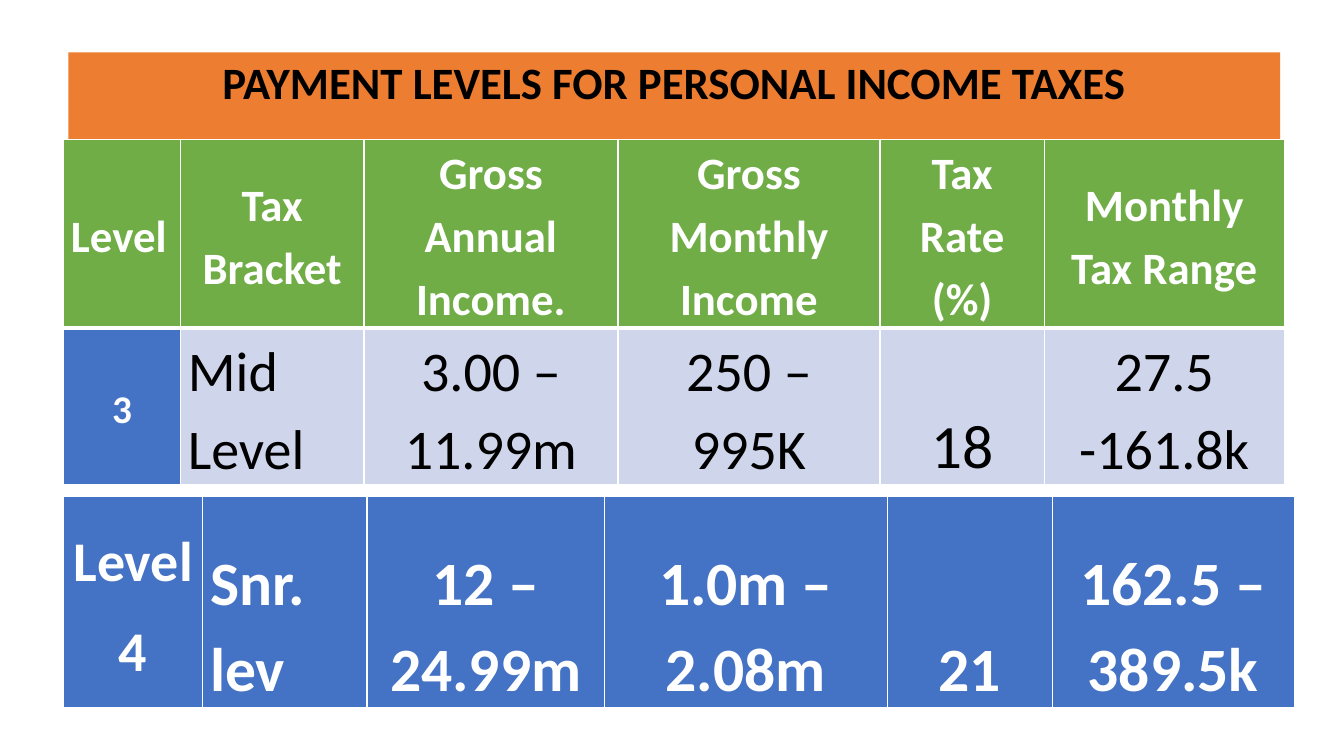
from dataclasses import dataclass

from lxml.etree import SubElement
from pptx import Presentation
from pptx.dml.color import RGBColor
from pptx.enum.shapes import MSO_SHAPE
from pptx.enum.text import MSO_ANCHOR, PP_ALIGN
from pptx.oxml.ns import qn
from pptx.util import Inches, Pt

WIDTH, HEIGHT = Inches(13.333), Inches(7.5)


@dataclass(frozen=True)
class Theme:
    font: str = "Calibri"
    orange: str = "ED7D31"
    green: str = "70AD47"
    blue: str = "4472C4"
    pale: str = "CFD5EA"
    black: str = "000000"
    white: str = "FFFFFF"
    small: int = 28
    heading: int = 32
    body: int = 40
    large: int = 44


THEME = Theme()


@dataclass(frozen=True)
class Cell:
    text: str
    size: int
    fill: str
    color: str = THEME.white
    bold: bool = True
    align: PP_ALIGN = PP_ALIGN.CENTER
    anchor: MSO_ANCHOR = MSO_ANCHOR.BOTTOM
    bottom_line: int = 3


def across(percent):
    return round(WIDTH * percent / 100)


def down(percent):
    return round(HEIGHT * percent / 100)


def add_run(p, text, size, color, bold):
    r = p.add_run()
    r.text = text
    r.font.name = THEME.font
    r.font.size = Pt(size)
    r.font.bold = bold
    r.font.color.rgb = RGBColor.from_string(color)


def add_title(slide, text, left, top, width, height):
    sp = slide.shapes.add_shape(MSO_SHAPE.RECTANGLE, across(left), down(top),
                                across(width), down(height))
    sp.shadow.inherit = False
    sp.fill.solid()
    sp.fill.fore_color.rgb = RGBColor.from_string(THEME.orange)
    sp.line.fill.background()
    tf = sp.text_frame
    tf.word_wrap = True
    tf.vertical_anchor = MSO_ANCHOR.TOP
    tf.margin_top = down(0.25)
    p = tf.paragraphs[0]
    p.alignment = PP_ALIGN.CENTER
    add_run(p, text, THEME.heading, THEME.black, True)


def set_borders(cell, bottom_line):
    tc_pr = cell._tc.get_or_add_tcPr()
    for side, points in (("L", 1), ("R", 1), ("T", 1), ("B", bottom_line)):
        line = SubElement(tc_pr, qn(f"a:ln{side}"), w=str(Pt(points)))
        fill = SubElement(line, qn("a:solidFill"))
        SubElement(fill, qn("a:srgbClr"), val=THEME.white)


def fill_cell(cell, content):
    set_borders(cell, content.bottom_line)
    cell.fill.solid()
    cell.fill.fore_color.rgb = RGBColor.from_string(content.fill)
    cell.vertical_anchor = content.anchor
    cell.margin_left = cell.margin_right = across(0.55)
    cell.margin_top = cell.margin_bottom = 0
    tf = cell.text_frame
    for i, text in enumerate(content.text.split("\n")):
        p = tf.add_paragraph() if i else tf.paragraphs[0]
        p.alignment = content.align
        p.line_spacing = 1.15
        p.space_after = Pt(8)
        add_run(p, text, content.size, content.color, content.bold)


def add_tax_table(slide, left, top, columns, rows, contents):
    table = slide.shapes.add_table(len(rows), len(columns), across(left), down(top),
                                   across(sum(columns)), down(sum(rows))).table
    for column, share in zip(table.columns, columns):
        column.width = across(share)
    for row, share in zip(table.rows, rows):
        row.height = down(share)
    for cell, content in zip(table.iter_cells(), contents):
        fill_cell(cell, content)


def heading(text, align=PP_ALIGN.CENTER):
    return Cell(text, THEME.heading, THEME.green, align=align, anchor=MSO_ANCHOR.MIDDLE)


def mid_level(text, size=THEME.body, align=PP_ALIGN.CENTER):
    return Cell(text, size, THEME.pale, THEME.black, False, align, bottom_line=1)


def senior_level(text, align=PP_ALIGN.CENTER):
    return Cell(text, THEME.large, THEME.blue, align=align)


def level_label(text, size, bottom_line):
    return Cell(text, size, THEME.blue, anchor=MSO_ANCHOR.MIDDLE, bottom_line=bottom_line)


def main():
    prs = Presentation()
    prs.slide_width, prs.slide_height = WIDTH, HEIGHT
    slide = prs.slides.add_slide(prs.slide_layouts[6])

    add_title(slide, "PAYMENT LEVELS FOR PERSONAL INCOME TAXES", 5.1, 6.93, 90.15, 12.93)

    headings = ["Tax Bracket", "Gross Annual Income.", "Gross Monthly Income",
                "Tax Rate (%)", "Monthly Tax Range"]
    add_tax_table(
        slide, 4.73, 18.4, [8.7, 13.65, 18.9, 19.5, 12.23, 17.85], [24.93, 18.93],
        [heading("Level", PP_ALIGN.LEFT), *map(heading, headings),
         level_label("3", THEME.small, 1),
         mid_level("Mid Level", align=PP_ALIGN.LEFT),
         mid_level("3.00 – 11.99m"),
         mid_level("250 – 995K"),
         mid_level("18", THEME.large),
         mid_level("27.5 -161.8k")])

    senior_values = ["12 – 24.99m", "1.0m – 2.08m", "21", "162.5 – 389.5k"]
    add_tax_table(
        slide, 4.73, 65.6, [10.35, 12.23, 17.7, 21, 12.3, 18], [28.13],
        [level_label("Level \n4", THEME.body, 3),
         senior_level("Snr. lev", PP_ALIGN.LEFT),
         *map(senior_level, senior_values)])

    prs.save("out.pptx")


if __name__ == "__main__":
    main()
